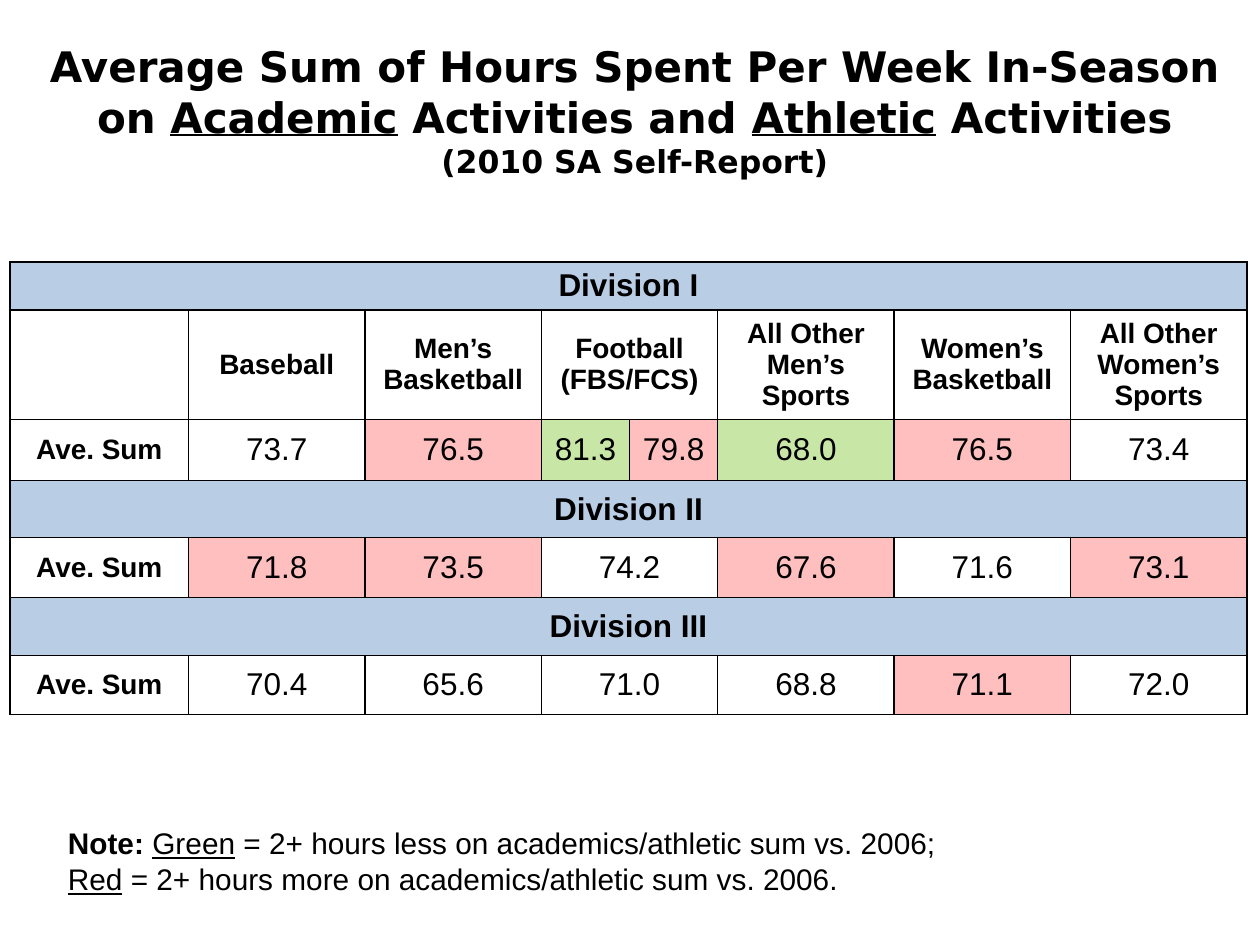
from lxml import etree
from pptx import Presentation
from pptx.dml.color import RGBColor
from pptx.enum.text import MSO_ANCHOR, MSO_AUTO_SIZE, PP_ALIGN
from pptx.oxml.ns import qn
from pptx.util import Pt

CENTER = PP_ALIGN.CENTER
MIDDLE = MSO_ANCHOR.MIDDLE
GROW = MSO_AUTO_SIZE.SHAPE_TO_FIT_TEXT
COLORS = {"ink": "000000", "band": "B9CDE5", "plain": "FFFFFF",
          "less": "92D050", "more": "FF0000"}
ALPHA = {"less": 50000, "more": 25000}


def add_run(para, text, **form):
    run = para.add_run()
    run.text = text
    for name, value in form.items():
        setattr(run.font, name, value)
    run.font.color.rgb = RGBColor.from_string(COLORS["ink"])


def fill_cell(cell, lines, tone, **form):
    cell.vertical_anchor = MIDDLE
    cell.margin_left = cell.margin_right = Pt(5)
    cell.margin_top = cell.margin_bottom = Pt(2.5)
    frame = cell.text_frame
    for i, line in enumerate(lines):
        para = frame.add_paragraph() if i else frame.paragraphs[0]
        para.alignment = CENTER
        add_run(para, line, name="Arial", **form)
    props = cell._tc.get_or_add_tcPr()
    for side in ("lnL", "lnR", "lnT", "lnB"):
        edge = etree.SubElement(props, qn(f"a:{side}"), w=str(Pt(1)))
        solid = etree.SubElement(edge, qn("a:solidFill"))
        etree.SubElement(solid, qn("a:srgbClr"), val=COLORS["ink"])
    cell.fill.solid()
    cell.fill.fore_color.rgb = RGBColor.from_string(COLORS[tone])
    if tone in ALPHA:
        color = props.find(qn("a:solidFill")).find(qn("a:srgbClr"))
        etree.SubElement(color, qn("a:alpha"), val=str(ALPHA[tone]))


deck = Presentation()
deck.slide_width, deck.slide_height = Pt(720), Pt(540)
slide = deck.slides.add_slide(deck.slide_layouts[6])

title = slide.shapes.add_textbox(Pt(5.76), Pt(42), Pt(714), Pt(42)).text_frame
title.word_wrap = True
title.vertical_anchor = MIDDLE
head = title.paragraphs[0]
head.alignment = CENTER
big = {"name": "DejaVu Sans", "size": Pt(24), "bold": True}
for text, under in [
    ("Average Sum of Hours Spent Per Week In-Season on ", False),
    ("Academic", True), (" Activities and ", False),
    ("Athletic", True), (" Activities", False),
]:
    add_run(head, text, underline=under, **big)
head.add_line_break()
add_run(head, "(2010 SA Self-Report)", **{**big, "size": Pt(18)})

widths = [102] + [100.8] * 2 + [50.4] * 2 + [100.8] * 3
heights = [27.4, 60.6, 34.9, 32.6, 34.2, 33.2, 33.7]
sports = ["Baseball", "Men’s Basketball", "Football\n(FBS/FCS)", None,
          "All Other Men’s Sports", "Women’s Basketball",
          "All Other Women’s Sports"]
sums = {
    "Division I": [("73.7", "plain"), ("76.5", "more"), ("81.3", "less"),
                   ("79.8", "more"), ("68.0", "less"), ("76.5", "more"),
                   ("73.4", "plain")],
    "Division II": [("71.8", "more"), ("73.5", "more"), ("74.2", "plain"),
                    None, ("67.6", "more"), ("71.6", "plain"),
                    ("73.1", "more")],
    "Division III": [("70.4", "plain"), ("65.6", "plain"), ("71.0", "plain"),
                     None, ("68.8", "plain"), ("71.1", "more"),
                     ("72.0", "plain")],
}

grid = slide.shapes.add_table(
    len(heights), len(widths), Pt(5.76), Pt(149.76),
    Pt(sum(widths)), Pt(sum(heights))).table
grid.first_row = grid.horz_banding = False
for col, width in zip(grid.columns, widths):
    col.width = Pt(width)
for row, height in zip(grid.rows, heights):
    row.height = Pt(height)

label = {"size": Pt(16), "bold": True}
band = {"size": Pt(18), "bold": True}
value = {"size": Pt(18), "bold": False}
rows = []
for name, marks in sums.items():
    rows.append([([name], "band", band)] + [None] * 7)
    if name == "Division I":
        rows.append([([], "plain", label)] + [
            (text.split("\n"), "plain", label) if text else None
            for text in sports])
    rows.append([(["Ave. Sum"], "plain", label)] + [
        ([mark[0]], mark[1], value) if mark else None for mark in marks])

for r, row in enumerate(rows):
    for c, item in enumerate(row):
        if item is None:
            fill_cell(grid.cell(r, c), [], row[c - 1][1] if row[c - 1] else "band")
        else:
            lines, tone, form = item
            fill_cell(grid.cell(r, c), lines, tone, **form)
    if row[1] is None:
        grid.cell(r, 0).merge(grid.cell(r, 7))
    elif row[4] is None:
        grid.cell(r, 3).merge(grid.cell(r, 4))

note = slide.shapes.add_textbox(Pt(31.7), Pt(468), Pt(519), Pt(48)).text_frame
note.word_wrap = False
note.auto_size = GROW
for i, parts in enumerate([
    [("Note: ", True, False), ("Green", False, True),
     (" = 2+ hours less on academics/athletic sum vs. 2006;", False, False)],
    [("Red", False, True),
     (" = 2+ hours more on academics/athletic sum vs. 2006.", False, False)],
]):
    para = note.add_paragraph() if i else note.paragraphs[0]
    for text, bold, under in parts:
        add_run(para, text, name="Arial", size=Pt(17), bold=bold, underline=under)

deck.save("out.pptx")
